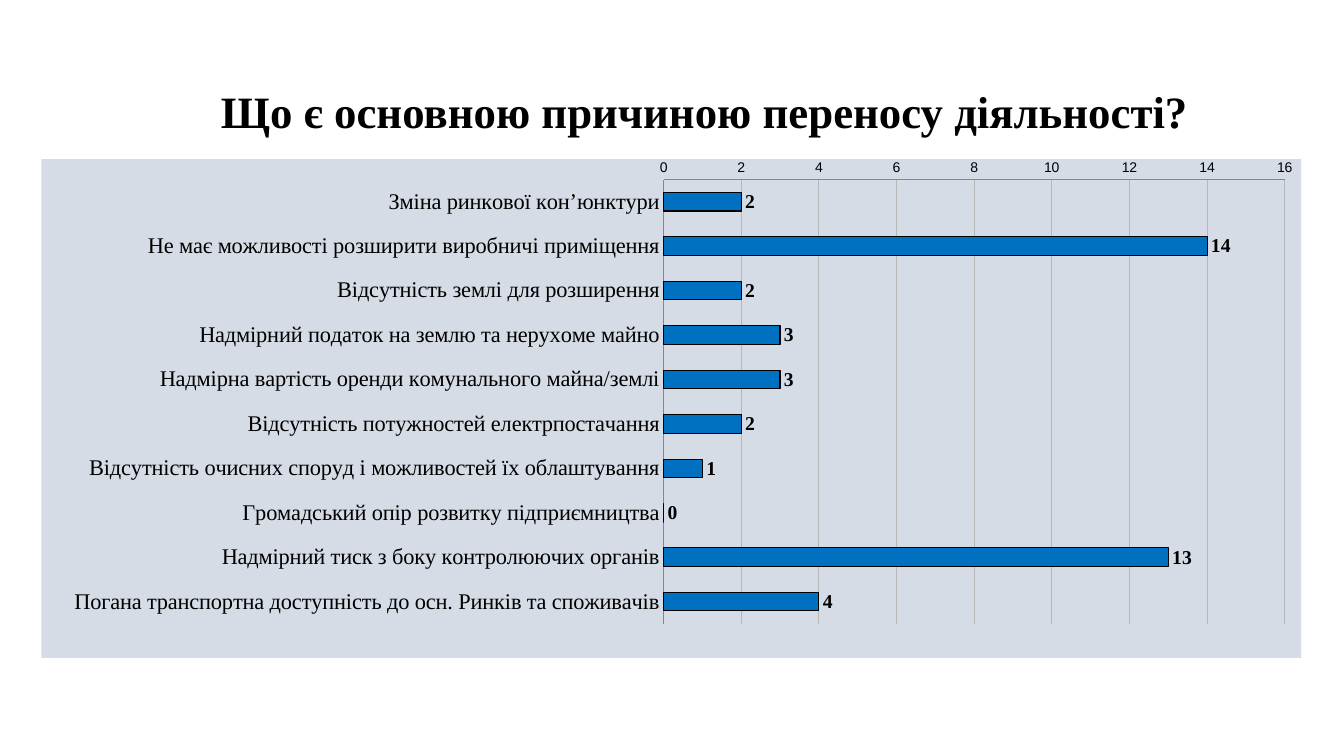
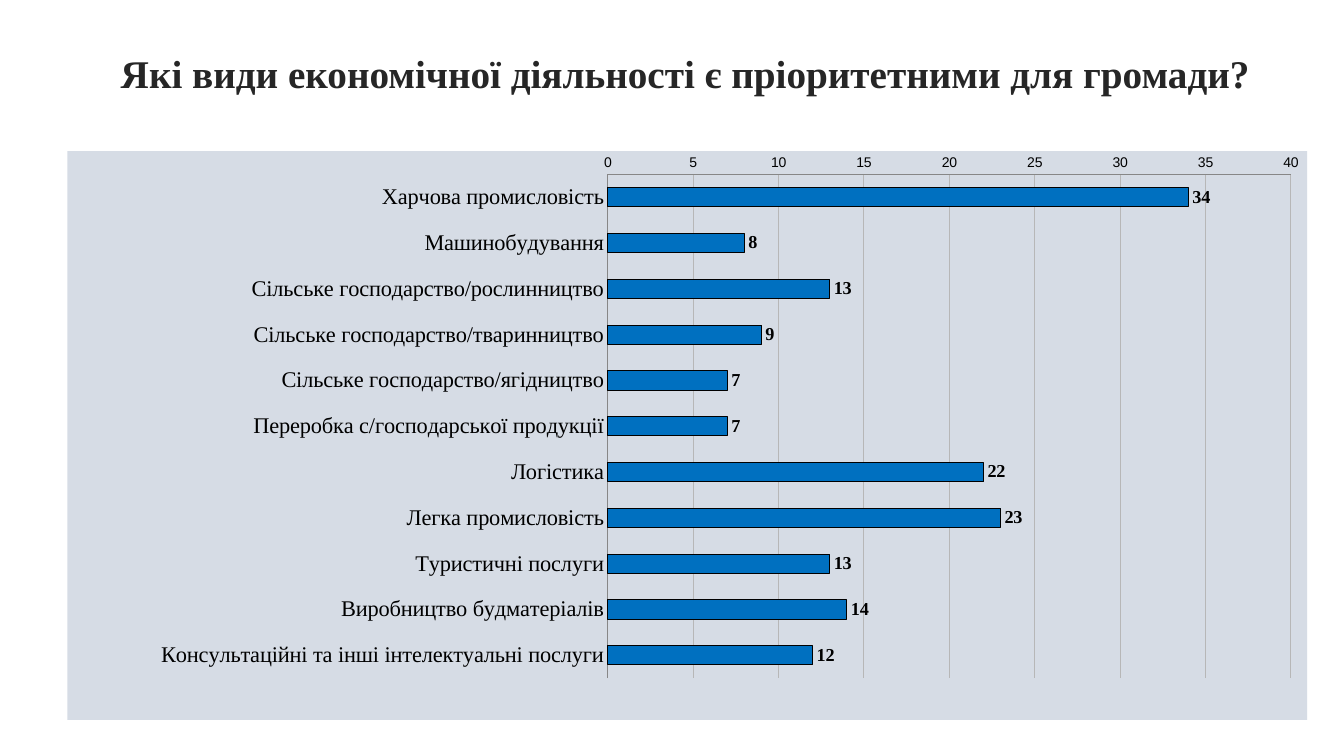
from dataclasses import dataclass

from lxml import etree
from pptx import Presentation
from pptx.chart.data import CategoryChartData
from pptx.dml.color import RGBColor
from pptx.enum.chart import (XL_AXIS_CROSSES, XL_CHART_TYPE,
                             XL_LABEL_POSITION, XL_TICK_MARK)
from pptx.enum.text import MSO_ANCHOR, PP_ALIGN
from pptx.oxml import parse_xml
from pptx.oxml.ns import nsdecls, qn
from pptx.util import Cm, Pt

BAR = XL_CHART_TYPE.BAR_CLUSTERED
AT_MAX = XL_AXIS_CROSSES.MAXIMUM
OUTSIDE = XL_LABEL_POSITION.OUTSIDE_END
NO_TICK = XL_TICK_MARK.NONE
BOTTOM = MSO_ANCHOR.BOTTOM
CENTER = PP_ALIGN.CENTER


@dataclass(frozen=True)
class Theme:
    """Colours, fonts and sizes shared by the slides."""
    black: str = "000000"
    dark: str = "262626"
    bar: str = "0070C0"
    panel: str = "D6DCE5"
    grid: str = "B7B7B7"
    axis: str = "878787"
    serif: str = "Times New Roman"
    sans: str = "Arial"
    base: str = "Calibri"
    category_size: int = 16
    scale_size: int = 10
    line_width: float = 0.75
    gap_width: int = 140


T = Theme()

SLIDES = [
    {
        "title": "Що є основною причиною переносу діяльності?",
        "title_box": (3.05, 1.4, 29.67, 2.21),
        "title_size": 32,
        "title_color": T.black,
        "chart_box": (1.04, 4.01, 31.75, 12.57),
        "plot": (0.494, 0.041, 0.493, 0.891),
        "scale": (16, 2),
        "label_size": 14,
        "data": {
            "Зміна ринкової кон’юнктури": 2,
            "Не має можливості розширити виробничі приміщення": 14,
            "Відсутність землі для розширення": 2,
            "Надмірний податок на землю та нерухоме майно": 3,
            "Надмірна вартість оренди комунального майна/землі": 3,
            "Відсутність потужностей електрпостачання": 2,
            "Відсутність очисних споруд і можливостей їх облаштування": 1,
            "Громадський опір розвитку підприємництва": 0,
            "Надмірний тиск з боку контролюючих органів": 13,
            "Погана транспортна доступність до осн. Ринків та споживачів": 4,
        },
    },
    {
        "title": "Які види економічної діяльності є пріоритетними для громади?",
        "title_box": (1.73, 0.91, 31.32, 1.65),
        "title_size": 28,
        "title_color": T.dark,
        "chart_box": (1.7, 3.81, 31.24, 14.33),
        "plot": (0.436, 0.041, 0.551, 0.886),
        "scale": (40, 5),
        "label_size": 13,
        "data": {
            "Харчова промисловість": 34,
            "Машинобудування": 8,
            "Сільське господарство/рослинництво": 13,
            "Сільське господарство/тваринництво": 9,
            "Сільське господарство/ягідництво": 7,
            "Переробка с/господарської продукції": 7,
            "Логістика": 22,
            "Легка промисловість": 23,
            "Туристичні послуги": 13,
            "Виробництво будматеріалів": 14,
            "Консультаційні та інші інтелектуальні послуги": 12,
        },
    },
]


def assign(obj, values):
    """Set each named attribute of an object."""
    for name, value in values.items():
        setattr(obj, name, value)


def style_font(font, name, size, color=T.black, bold=False):
    """Set the face, size, weight and colour of a font."""
    assign(font, {"name": name, "size": Pt(size), "bold": bold})
    font.color.rgb = RGBColor.from_string(color)


def style_line(line, color):
    """Give a line its colour and the shared width."""
    line.color.rgb = RGBColor.from_string(color)
    line.width = Pt(T.line_width)


def add_title(s, box, text, size, color):
    """Place a centred bold title at the foot of its box."""
    tf = s.shapes.add_textbox(*map(Cm, box)).text_frame
    assign(tf, {"word_wrap": True, "vertical_anchor": BOTTOM, "margin_left": 0})
    p = tf.paragraphs[0]
    assign(p, {"alignment": CENTER, "line_spacing": 0.9})
    r = p.add_run()
    r.text = text
    style_font(r.font, T.serif, size, color, True)


def fill_panel(chart):
    """Fill the chart area and leave out its border."""
    chart.element.find(qn("c:chart")).addnext(parse_xml(
        f'<c:spPr {nsdecls("c", "a")}><a:solidFill><a:srgbClr val="{T.panel}"/>'
        '</a:solidFill><a:ln><a:noFill/></a:ln></c:spPr>'))


def set_plot(chart, plot):
    """Fix the inner plot area as fractions of the chart."""
    area = chart.element.find(qn("c:chart")).find(qn("c:plotArea"))
    for old in area.findall(qn("c:layout")):
        area.remove(old)
    layout = parse_xml(f'<c:layout {nsdecls("c")}><c:manualLayout/></c:layout>')
    values = [("layoutTarget", "inner"), ("xMode", "edge"), ("yMode", "edge")]
    for tag, value in values + list(zip("xywh", plot)):
        etree.SubElement(layout[0], qn(f"c:{tag}")).set("val", str(value))
    area.insert(0, layout)


def style_axes(chart, scale):
    """List categories downwards and keep the value scale at the bottom."""
    cat, val = chart.category_axis, chart.value_axis
    top, step = scale
    assign(cat, {"reverse_order": True, "crosses": AT_MAX,
                 "has_major_gridlines": False})
    assign(val, {"minimum_scale": 0, "maximum_scale": top, "major_unit": step,
                 "has_major_gridlines": True})
    for axis, name, size in ((cat, T.serif, T.category_size),
                             (val, T.sans, T.scale_size)):
        assign(axis, {"major_tick_mark": NO_TICK, "minor_tick_mark": NO_TICK})
        style_font(axis.tick_labels.font, name, size)
        style_line(axis.format.line, T.axis)
    style_line(val.major_gridlines.format.line, T.grid)


def style_bars(plot, label_size):
    """Colour the bars and put bold values at their ends."""
    assign(plot, {"gap_width": T.gap_width, "vary_by_categories": False})
    series = plot.series[0]
    series.format.fill.solid()
    series.format.fill.fore_color.rgb = RGBColor.from_string(T.bar)
    style_line(series.format.line, T.black)
    labels = series.data_labels
    assign(labels, {"show_value": True, "position": OUTSIDE})
    style_font(labels.font, T.serif, label_size, bold=True)


def add_bar_chart(s, box, data, plot, scale, label_size):
    """Place a horizontal bar chart on a tinted panel."""
    chart_data = CategoryChartData()
    chart_data.categories = list(data)
    chart_data.add_series("Series 1", list(data.values()))
    chart = s.shapes.add_chart(BAR, *map(Cm, box), chart_data).chart
    assign(chart, {"has_legend": False, "has_title": False})
    style_font(chart.font, T.base, T.scale_size)
    fill_panel(chart)
    set_plot(chart, plot)
    style_axes(chart, scale)
    style_bars(chart.plots[0], label_size)


def add_survey_slide(prs, d):
    """Add one survey question with its answers."""
    s = prs.slides.add_slide(prs.slide_layouts[6])
    add_title(s, d["title_box"], d["title"], d["title_size"], d["title_color"])
    add_bar_chart(s, d["chart_box"], d["data"], d["plot"], d["scale"],
                  d["label_size"])


def main():
    """Build and save the presentation."""
    prs = Presentation()
    assign(prs, {"slide_width": Cm(33.87), "slide_height": Cm(19.05)})
    for d in SLIDES:
        add_survey_slide(prs, d)
    prs.save("out.pptx")


if __name__ == "__main__":
    main()
